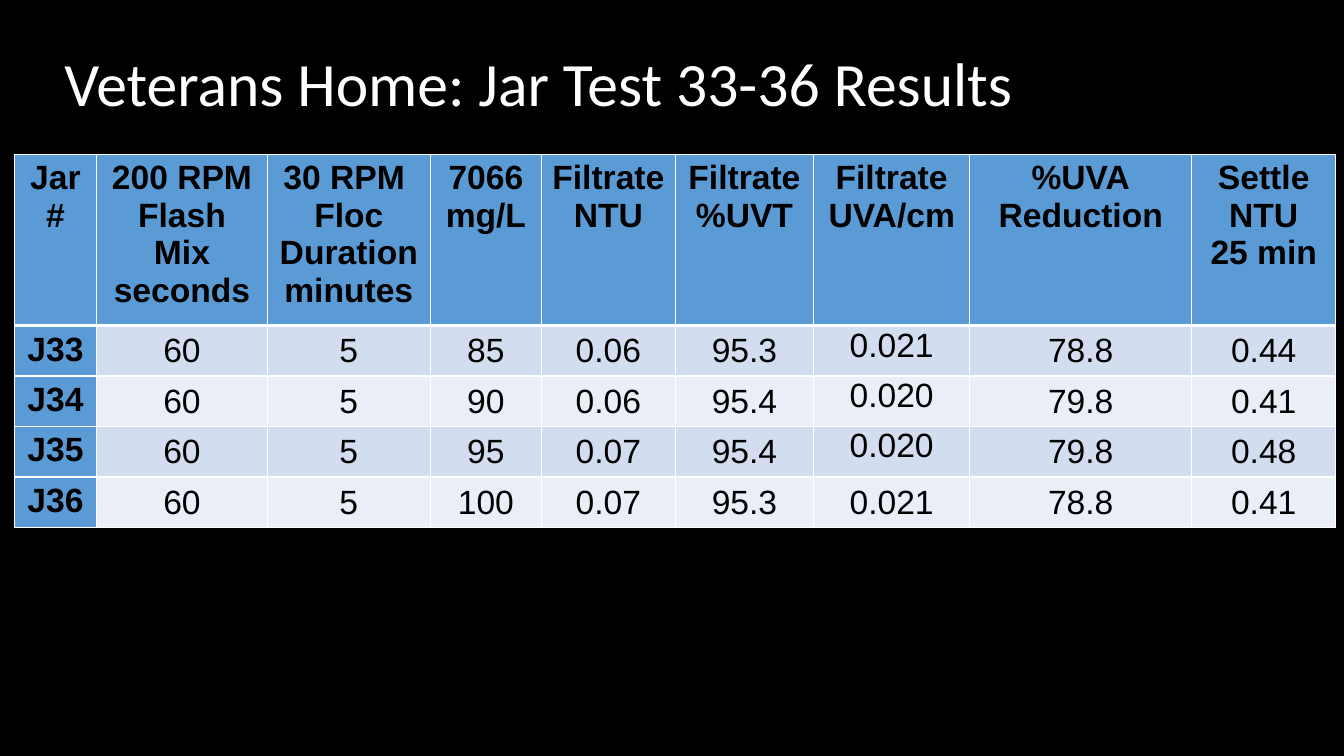
from lxml import etree
from pptx import Presentation
from pptx.dml.color import RGBColor
from pptx.enum.text import MSO_ANCHOR, PP_ALIGN
from pptx.oxml.ns import qn
from pptx.util import Inches, Pt

TOP, MIDDLE = MSO_ANCHOR.TOP, MSO_ANCHOR.MIDDLE
LEFT, CENTER = PP_ALIGN.LEFT, PP_ALIGN.CENTER
BLACK = RGBColor(0x00, 0x00, 0x00)
WHITE = RGBColor(0xFF, 0xFF, 0xFF)
BLUE = RGBColor(0x5B, 0x9B, 0xD5)
BANDS = (RGBColor(0xD2, 0xDE, 0xEF), RGBColor(0xEA, 0xEF, 0xF7))

COLUMN_WIDTHS = (0.82, 1.69, 1.62, 1.1, 1.33, 1.37, 1.55, 2.2, 1.43)
ROW_HEIGHT = 0.41
UVA_COLUMN = 6
HEADERS = (
    "Jar\n#",
    "200 RPM\nFlash\nMix\nseconds",
    "30 RPM \nFloc\nDuration\nminutes",
    "7066\nmg/L",
    "Filtrate\nNTU",
    "Filtrate\n%UVT",
    "Filtrate\nUVA/cm",
    "%UVA\nReduction",
    "Settle\nNTU\n25 min",
)
RESULTS = (
    ("J33", "60", "5", "85", "0.06", "95.3", "0.021", "78.8", "0.44"),
    ("J34", "60", "5", "90", "0.06", "95.4", "0.020", "79.8", "0.41"),
    ("J35", "60", "5", "95", "0.07", "95.4", "0.020", "79.8", "0.48"),
    ("J36", "60", "5", "100", "0.07", "95.3", "0.021", "78.8", "0.41"),
)


def apply_format(target, values):
    for name, value in values.items():
        setattr(target, name, value)


class JarTestSlide:
    """Hold the slide and its style, and draw each kind of element."""

    title_font = {"name": "Calibri", "size": Pt(44)}
    table_font = {"name": "Arial", "size": Pt(24)}
    value_margins = {
        "margin_left": Inches(0.01),
        "margin_right": Inches(0.01),
        "margin_top": Inches(0.01),
        "margin_bottom": Inches(0),
    }

    def __init__(self, presentation):
        self.slide = presentation.slides.add_slide(presentation.slide_layouts[6])
        background = self.slide.background.fill
        background.solid()
        background.fore_color.rgb = BLACK

    def fill_text(self, frame, text, font, color, paragraph_format):
        frame.text = text
        for paragraph in frame.paragraphs:
            apply_format(paragraph, paragraph_format)
            for run in paragraph.runs:
                apply_format(run.font, font)
                run.font.color.rgb = color

    def title(self, text, left, top, width, height):
        shape = self.slide.shapes.add_textbox(
            Inches(left), Inches(top), Inches(width), Inches(height)
        )
        frame = shape.text_frame
        apply_format(frame, {"word_wrap": True, "vertical_anchor": MIDDLE})
        layout = {"alignment": LEFT, "line_spacing": 0.9}
        self.fill_text(frame, text, self.title_font, WHITE, layout)

    def borders(self, cell, top, bottom):
        properties = cell._tc.get_or_add_tcPr()
        for side, points in (("L", 1), ("R", 1), ("T", top), ("B", bottom)):
            line = etree.SubElement(properties, qn(f"a:ln{side}"), w=str(Pt(points)))
            fill = etree.SubElement(line, qn("a:solidFill"))
            etree.SubElement(fill, qn("a:srgbClr"), val=str(WHITE))

    def cell(self, cell, text, row, column):
        heading = row == 0 or column == 0
        self.borders(cell, 3 if row == 1 else 1, 3 if row == 0 else 1)
        cell.fill.solid()
        cell.fill.fore_color.rgb = BLUE if heading else BANDS[(row - 1) % 2]
        if not heading:
            raised = column == UVA_COLUMN and row < len(RESULTS)
            anchor = TOP if raised else MIDDLE
            apply_format(cell, {**self.value_margins, "vertical_anchor": anchor})
        font = {**self.table_font, "bold": heading}
        self.fill_text(cell.text_frame, text, font, BLACK, {"alignment": CENTER})

    def table(self, rows, left, top, height):
        shape = self.slide.shapes.add_table(
            len(rows), len(COLUMN_WIDTHS), Inches(left), Inches(top),
            Inches(sum(COLUMN_WIDTHS)), Inches(height),
        )
        table = shape.table
        for column, width in zip(table.columns, COLUMN_WIDTHS):
            column.width = Inches(width)
        for row in table.rows:
            row.height = Inches(ROW_HEIGHT)
        shape.height = Inches(height)
        for row, texts in enumerate(rows):
            for column, text in enumerate(texts):
                self.cell(table.cell(row, column), text, row, column)


def main():
    presentation = Presentation()
    presentation.slide_width = Inches(13.33)
    presentation.slide_height = Inches(7.5)
    slide = JarTestSlide(presentation)
    slide.title("Veterans Home: Jar Test 33-36 Results", 0.54, 0.13, 11.88, 1.45)
    slide.table((HEADERS, *RESULTS), 0.14, 1.53, 3.7)
    presentation.save("out.pptx")


if __name__ == "__main__":
    main()
